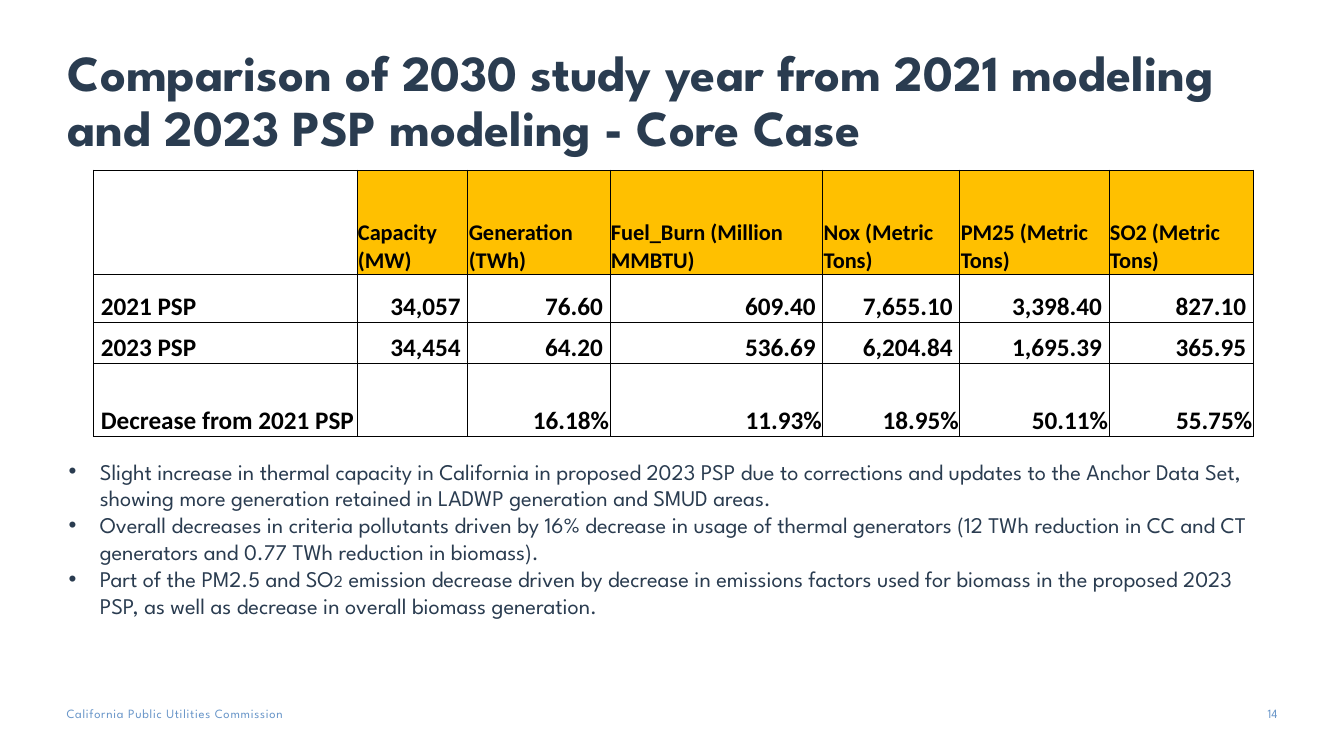
import pptx
import pptx.dml.color
import pptx.enum.text
import pptx.oxml
import pptx.oxml.ns
import pptx.util
from lxml import etree

WIDTH, HEIGHT = 13.33, 7.5
HEADING_FONT, TABLE_FONT = "League Spartan", "Calibri"
NAVY, BLUE, BLACK, WHITE, GOLD = "2A3C50", "6996C9", "000000", "FFFFFF", "FFC000"
ALIGN = pptx.enum.text.PP_ALIGN
ANCHOR = pptx.enum.text.MSO_ANCHOR

COLUMN_WEIGHTS = [2.61, 1.1, 1.41, 2.11, 1.36, 1.48, 1.43]
ROW_WEIGHTS = [1.03, 0.48, 0.4, 0.73]
ROWS = [
    ["", "Capacity (MW)", "Generation (TWh)", "Fuel_Burn (Million MMBTU)",
     "Nox (Metric Tons)", "PM25 (Metric Tons)", "SO2 (Metric Tons)"],
    ["2021 PSP", "34,057", "76.60", "609.40", "7,655.10", "3,398.40", "827.10"],
    ["2023 PSP", "34,454", "64.20", "536.69", "6,204.84", "1,695.39", "365.95"],
    ["Decrease from 2021 PSP", "", "16.18%", "11.93%", "18.95%", "50.11%", "55.75%"],
]
# Each bullet is a list of (text, size) runs
BULLETS = [
    [("Slight increase in thermal capacity in California in proposed 2023 PSP due to "
      "corrections and updates to the Anchor Data Set, showing more generation retained "
      "in LADWP generation and SMUD areas.", 16)],
    [("Overall decreases in criteria pollutants driven by 16% decrease in usage of thermal "
      "generators (12 TWh reduction in CC and CT generators and 0.77 TWh reduction in "
      "biomass).", 16)],
    [("Part of the PM2.5 and SO", 16), ("2", 12),
     (" emission decrease driven by decrease in emissions factors used for biomass in the "
      "proposed 2023 PSP, as well as decrease in overall biomass generation.", 16)],
]


def rgb(value):
    return pptx.dml.color.RGBColor.from_string(value)


def share_box(left, top, width, height):
    """Turn percentages of the slide into lengths."""
    x, y = WIDTH / 100, HEIGHT / 100
    return [pptx.util.Inches(n) for n in (left * x, top * y, width * x, height * y)]


def place(sp, box):
    sp.left, sp.top, sp.width, sp.height = box


def set_margins(target, left, top, right, bottom):
    target.margin_left, target.margin_top, target.margin_right, target.margin_bottom = (
        pptx.util.Inches(n) for n in (left, top, right, bottom))


def style_run(r, size, color, font=HEADING_FONT, bold=False):
    r.font.size, r.font.name, r.font.bold = pptx.util.Pt(size), font, bold
    r.font.color.rgb = rgb(color)


def add_title(slide, box, text):
    sp = slide.shapes.title
    place(sp, box)
    tf = sp.text_frame
    tf.text = text
    tf.auto_size = pptx.enum.text.MSO_AUTO_SIZE.NONE
    tf.vertical_anchor = ANCHOR.BOTTOM
    set_margins(tf, 0, 0.05, 0.1, 0.05)
    p = tf.paragraphs[0]
    p.alignment, p.line_spacing = ALIGN.LEFT, 0.9
    style_run(p.runs[0], 36, NAVY, bold=True)


def add_bullet(p):
    pPr = p._p.get_or_add_pPr()
    indent = pptx.util.Inches(0.31)
    pPr.set("marL", str(indent))
    pPr.set("indent", str(-indent))
    etree.SubElement(pPr, pptx.oxml.ns.qn("a:buFont")).set("typeface", "Arial")
    etree.SubElement(pPr, pptx.oxml.ns.qn("a:buChar")).set("char", "•")


def add_bullets(slide, box, bullets):
    sp = slide.placeholders[1]
    place(sp, box)
    tf = sp.text_frame
    tf.auto_size = pptx.enum.text.MSO_AUTO_SIZE.NONE
    for i, runs in enumerate(bullets):
        p = tf.add_paragraph() if i else tf.paragraphs[0]
        add_bullet(p)
        p.space_before = pptx.util.Pt(0)
        for text, size in runs:
            r = p.add_run()
            r.text = text
            style_run(r, size, NAVY)


def set_borders(cell, widths):
    """Draw the left, right, top and bottom borders, in that order."""
    tcPr = cell._tc.get_or_add_tcPr()
    for i, (side, width) in enumerate(zip("LRTB", widths)):
        tcPr.insert(i, pptx.oxml.parse_xml(
            f'<a:ln{side} {pptx.oxml.ns.nsdecls("a")} w="{pptx.util.Pt(width)}">'
            f'<a:solidFill><a:srgbClr val="{BLACK}"/></a:solidFill></a:ln{side}>'))


def fill_cell(cell, text, row, col):
    header = row == 0
    cell.fill.solid()
    cell.fill.fore_color.rgb = rgb(GOLD if header and col else WHITE)
    cell.vertical_anchor = ANCHOR.BOTTOM
    number = not header and col > 0
    right = 0.07 if number and not text.endswith("%") else 0.01
    set_margins(cell, 0.01 if col else 0.07, 0.01, right, 0)
    p = cell.text_frame.paragraphs[0]
    p.text = text
    p.alignment = ALIGN.RIGHT if number else ALIGN.LEFT
    for r in p.runs:
        style_run(r, 16 if header else 18, BLACK, TABLE_FONT, True)


def add_comparison_table(slide, box, rows):
    row_count, col_count = len(rows), len(rows[0])
    table = slide.shapes.add_table(row_count, col_count, *box).table
    table.first_row = table.horz_banding = False
    for column, weight in zip(table.columns, COLUMN_WEIGHTS):
        column.width = int(box[2] * weight / sum(COLUMN_WEIGHTS))
    for table_row, weight in zip(table.rows, ROW_WEIGHTS):
        table_row.height = int(box[3] * weight / sum(ROW_WEIGHTS))
    for row, texts in enumerate(rows):
        for col, text in enumerate(texts):
            cell = table.cell(row, col)
            fill_cell(cell, text, row, col)
            outer = (col == 0, col == col_count - 1, row == 0, row == row_count - 1)
            set_borders(cell, [1 if edge else 0.5 for edge in outer])


def add_footer_text(slide, box, text, alignment, spacing=0):
    tf = slide.shapes.add_textbox(*box).text_frame
    tf.word_wrap = True
    set_margins(tf, 0, 0, 0, 0)
    p = tf.paragraphs[0]
    p.text, p.alignment = text, alignment
    r = p.runs[0]
    style_run(r, 9, BLUE)
    r._r.get_or_add_rPr().set("spc", str(spacing))


def main():
    prs = pptx.Presentation()
    prs.slide_width = pptx.util.Inches(WIDTH)
    prs.slide_height = pptx.util.Inches(HEIGHT)
    slide = prs.slides.add_slide(prs.slide_layouts[1])

    # Heading, table and findings
    add_title(slide, share_box(5.03, 4, 90, 17.47),
              "Comparison of 2030 study year from 2021 modeling and 2023 PSP modeling"
              " - Core Case")
    add_comparison_table(slide, share_box(6.98, 22.53, 86.27, 35.2), ROWS)
    add_bullets(slide, share_box(4.35, 59.87, 91.3, 22.93), BULLETS)

    # Footer
    add_footer_text(slide, share_box(4.95, 93.33, 24.08, 2),
                    "California Public Utilities Commission", ALIGN.LEFT, 50)
    add_footer_text(slide, share_box(91.9, 93.33, 3.15, 2.67), "14", ALIGN.RIGHT)

    prs.save("out.pptx")


if __name__ == "__main__":
    main()
